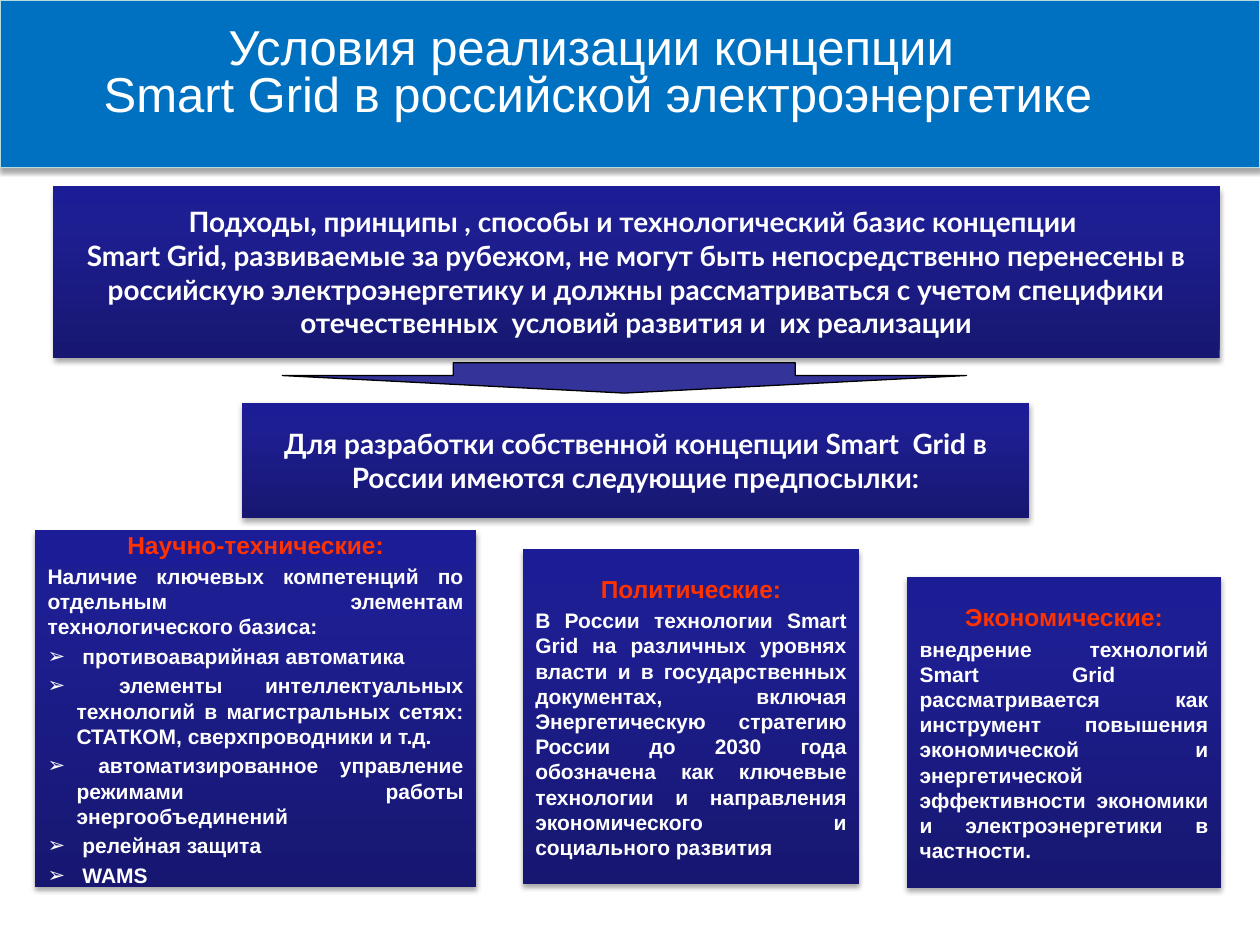
from copy import deepcopy

from lxml import etree
from pptx import Presentation
from pptx import util as u
from pptx.dml import color
from pptx.enum import shapes, text
from pptx.oxml import ns

CELL = u.Inches(0.1)
COLS, ROWS = 100, 75
WHITE, RED = "FFFFFF", "FF3300"
STOPS = ((0, "171771"), (80, "1E1E93"), (100, "1C1C96"))
CENTER, JUSTIFY = text.PP_ALIGN.CENTER, text.PP_ALIGN.JUSTIFY
LEAD = {"name": "Lato", "size": u.Pt(16), "bold": True}
HEAD = {"name": "Arial", "size": u.Pt(14), "bold": True}
BODY = {"name": "Arial", "size": u.Pt(12), "bold": True}
TITLE = {"name": "Arial", "size": u.Pt(28), "bold": False}

PANELS = (
    ((72, 45.8, 24.9, 24.7), "Экономические:",
     "внедрение технологий Smart Grid  рассматривается как инструмент повышения "
     "экономической и энергетической эффективности экономики и "
     "электроэнергетики в частности.", ()),
    ((2.8, 42.1, 35, 28.3), "Научно-технические:",
     "Наличие ключевых компетенций по отдельным элементам технологического базиса:",
     (" противоаварийная автоматика",
      " элементы интеллектуальных технологий в магистральных сетях: "
      "СТАТКОМ, сверхпроводники и т.д.",
      " автоматизированное управление режимами работы энергообъединений",
      " релейная защита",
      " WAMS")),
    ((41.5, 43.6, 26.7, 26.6), "Политические:",
     "В России технологии Smart Grid на различных уровнях власти и в "
     "государственных документах, включая Энергетическую стратегию России до "
     "2030 года обозначена как ключевые технологии и направления экономического "
     "и социального развития", ()),
)


def rgb(value):
    """Turn a hex string into a colour."""
    return color.RGBColor.from_string(value)


def grid(*cells):
    """Turn grid columns and rows into lengths."""
    return [round(c * CELL) for c in cells]


def add_xml(parent, xml):
    """Append a drawing element written as XML."""
    head, sep, tail = xml.partition(" ")
    parent.append(etree.fromstring(f'{head} {ns.nsdecls("a")}{sep}{tail}'))


def add_gradient(sp):
    """Fill a shape with the dark blue vertical gradient."""
    sp.fill.gradient()
    sp.fill.gradient_angle = 90
    stops = sp._element.spPr.find(ns.qn("a:gradFill")).find(ns.qn("a:gsLst"))
    for old in list(stops):
        stops.remove(old)
    for share, value in STOPS:
        add_xml(stops, f'<a:gs pos="{share * 1000}"><a:srgbClr val="{value}"/></a:gs>')


def add_shadow(sp):
    """Give a shape a soft shadow that falls downwards."""
    add_xml(sp._element.spPr.find(ns.qn("a:effectLst")),
            f'<a:outerShdw blurRad="{u.Pt(3.1)}" dist="{u.Pt(1.8)}" dir="5400000" '
            'rotWithShape="0"><a:srgbClr val="000000"><a:alpha val="35000"/>'
            '</a:srgbClr></a:outerShdw>')


def add_shape(s, kind, at, fill=None, line=None):
    """Add a preset shape; without a fill colour it gets the gradient."""
    sp = s.shapes.add_shape(kind, *grid(*at))
    sp.shadow.inherit = False
    if fill:
        sp.fill.solid()
        sp.fill.fore_color.rgb = rgb(fill)
    else:
        add_gradient(sp)
    if line:
        sp.line.color.rgb = rgb(line)
        sp.line.width = u.Pt(0.75)
    else:
        sp.line.fill.background()
    return sp


def add_text(tf, content, font, value, align, bullet=False):
    """Write one paragraph, taking the empty first one if it is free."""
    first = not tf.text
    p = tf.paragraphs[0] if first else tf.add_paragraph()
    p.text = content
    p.alignment = align
    if not first:
        p.space_before = u.Pt(2.5)
    if bullet:
        pPr = p._p.get_or_add_pPr()
        indent = u.Inches(0.23)
        pPr.set("marL", str(indent))
        pPr.set("indent", str(-indent))
        add_xml(pPr, '<a:buFont typeface="Arial"/>')
        add_xml(pPr, '<a:buChar char="➢"/>')
    for r in p.runs:
        for name, setting in font.items():
            setattr(r.font, name, setting)
        r.font.color.rgb = rgb(value)
    for br in p._p.findall(ns.qn("a:br")):
        br.append(deepcopy(p.runs[0]._r.rPr))
    return p


def add_box(s, at, paragraphs):
    """Add a shadowed gradient box holding paragraphs."""
    sp = add_shape(s, shapes.MSO_SHAPE.RECTANGLE, at)
    add_shadow(sp)
    tf = sp.text_frame
    tf.word_wrap = True
    tf.vertical_anchor = text.MSO_ANCHOR.MIDDLE
    for paragraph in paragraphs:
        add_text(tf, *paragraph)


def add_panel(s, at, heading, body, bullets):
    """Add a box with a red heading, a body text and bullets."""
    add_box(s, at, [(heading, HEAD, RED, CENTER), (body, BODY, WHITE, JUSTIFY)]
            + [(item, BODY, WHITE, JUSTIFY, True) for item in bullets])


def add_title(s, content):
    """Add the blue banner and the title over it."""
    banner = add_shape(s, shapes.MSO_SHAPE.RECTANGLE, (0, 0, COLS, 13.3),
                       "0070C0", "B6DCDF")
    add_shadow(banner)
    tf = s.shapes.add_textbox(*grid(-0.6, 0.6, 96.1, 10.7)).text_frame
    tf.word_wrap = True
    tf.vertical_anchor = text.MSO_ANCHOR.MIDDLE
    add_text(tf, content, TITLE, WHITE, CENTER).line_spacing = 0.8


def main():
    """Build the slide and save it."""
    prs = Presentation()
    prs.slide_width, prs.slide_height = grid(COLS, ROWS)
    s = prs.slides.add_slide(prs.slide_layouts[6])
    add_box(s, (4.2, 14.8, 92.6, 13.6), [(
        "Подходы, принципы , способы и технологический базис концепции \v"
        "Smart Grid, развиваемые за рубежом, не могут быть непосредственно "
        "перенесены в российскую электроэнергетику и должны рассматриваться с "
        "учетом специфики отечественных  условий развития и  их реализации",
        LEAD, WHITE, CENTER)])
    add_box(s, (19.2, 32, 62.5, 9.1), [(
        "Для разработки собственной концепции Smart  Grid в России имеются "
        "следующие предпосылки:", LEAD, WHITE, CENTER)])
    arrow = add_shape(s, shapes.MSO_SHAPE.DOWN_ARROW, (22.4, 28.8, 54.3, 2.4),
                      "333399", "000000")
    arrow.adjustments[0], arrow.adjustments[1] = 0.5, 0.58
    for panel in PANELS:
        add_panel(s, *panel)
    add_title(s, "Условия реализации концепции \v"
                 "Smart Grid в российской электроэнергетике")
    prs.save("out.pptx")


if __name__ == "__main__":
    main()
